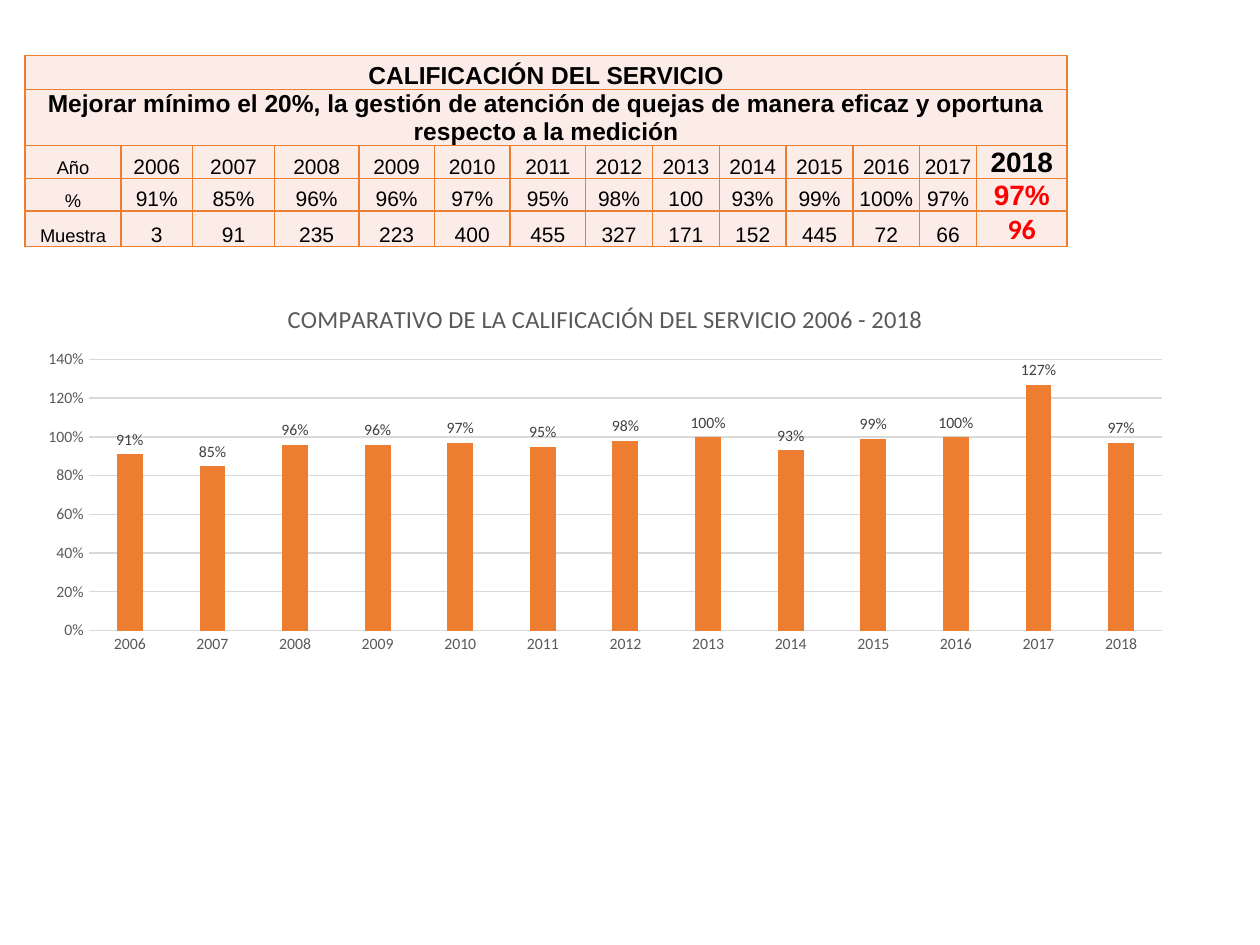
from lxml import etree
from pptx import Presentation
from pptx import util as u
from pptx.chart import data
from pptx.dml import color
from pptx.enum import chart as ch
from pptx.enum import text
from pptx.oxml import ns

Pt = u.Pt


class Theme:
    orange = "ED7D31"
    blush = "FCECE8"
    black = "000000"
    red = "FF0000"
    gray = "595959"
    dark = "404040"
    rule = "D9D9D9"
    sans = "Arial"
    body = "Calibri"
    head = 14
    big = 16
    cell = 12
    side = 10.5
    base = 10
    tick = 9


def style(font, size=Theme.cell, name=Theme.sans, tint=Theme.black, bold=False):
    font.size = Pt(size)
    font.name = name
    font.bold = bold
    font.color.rgb = color.RGBColor.from_string(tint)


def fill_cell(cell, words, **form):
    cell.margin_left = cell.margin_right = cell.margin_top = Pt(0.72)
    cell.margin_bottom = 0
    cell.vertical_anchor = text.MSO_ANCHOR.BOTTOM
    cell.fill.solid()
    cell.fill.fore_color.rgb = color.RGBColor.from_string(Theme.blush)
    para = cell.text_frame.paragraphs[0]
    para.alignment = text.PP_ALIGN.CENTER
    run = para.add_run()
    run.text = words
    style(run.font, **form)


deck = Presentation()
deck.slide_width, deck.slide_height = Pt(720), Pt(540)
slide = deck.slides.add_slide(deck.slide_layouts[6])

# Ratings by year
years = [str(year) for year in range(2006, 2019)]
rows = [
    ["Año", *years],
    ["%", "91%", "85%", "96%", "96%", "97%", "95%", "98%", "100", "93%",
     "99%", "100%", "97%", "97%"],
    ["Muestra", "3", "91", "235", "223", "400", "455", "327", "171", "152",
     "445", "72", "66", "96"],
]
heads = [
    "CALIFICACIÓN DEL SERVICIO",
    "Mejorar mínimo el 20%, la gestión de atención de quejas de manera eficaz"
    " y oportuna respecto a la medición",
]
wide = [54.7, 41, 46.8, 48.2] + [43.2] * 3 + [38.2] * 5 + [32.4, 51.8]
high = [19.4, 19.4, 18.7, 18.7, 19.4]
table = slide.shapes.add_table(
    len(high), len(wide), Pt(14.4), Pt(31.7), Pt(595.4), Pt(113)).table
for col, size in zip(table.columns, wide):
    col.width = Pt(size)
for row, size in zip(table.rows, high):
    row.height = Pt(size)

# Merged headings
for r, words in enumerate(heads):
    table.cell(r, 0).merge(table.cell(r, len(wide) - 1))
    fill_cell(table.cell(r, 0), words, size=Theme.head, bold=True)

# Figures, with the last year set off
last = len(years)
for r, row in enumerate(rows):
    for c, words in enumerate(row):
        form = {}
        if c == 0:
            form = {"size": Theme.side}
        elif c == last:
            form = {"size": Theme.big, "bold": True,
                    "tint": Theme.red if r else Theme.black,
                    "name": Theme.body if r == 2 else Theme.sans}
        fill_cell(table.cell(r + len(heads), c), words, **form)

# Cell borders
for cell in table.iter_cells():
    props = cell._tc.get_or_add_tcPr()
    for i, side in enumerate(("lnL", "lnR", "lnT", "lnB")):
        line = etree.Element(ns.qn("a:" + side), w=str(Pt(1)))
        paint = etree.SubElement(line, ns.qn("a:solidFill"))
        etree.SubElement(paint, ns.qn("a:srgbClr"), val=Theme.orange)
        props.insert(i, line)

# Column chart
marks = data.CategoryChartData(number_format="0%")
marks.categories = years
marks.add_series("Series 1", [0.91, 0.85, 0.96, 0.96, 0.97, 0.95, 0.98, 1,
                              0.93, 0.99, 1, 1.27, 0.97])
chart = slide.shapes.add_chart(
    ch.XL_CHART_TYPE.COLUMN_CLUSTERED, Pt(14.4), Pt(162), Pt(663.1), Pt(216),
    marks).chart
style(chart.font, size=Theme.base, name=Theme.body)
chart.has_legend = False
chart.has_title = True
title = chart.chart_title.text_frame
title.text = "COMPARATIVO DE LA CALIFICACIÓN DEL SERVICIO 2006 - 2018"
style(title.paragraphs[0].runs[0].font, size=Theme.head, name=Theme.body,
      tint=Theme.gray)

# Axes
cats, vals = chart.category_axis, chart.value_axis
for axis in (cats, vals):
    axis.major_tick_mark = axis.minor_tick_mark = ch.XL_TICK_MARK.NONE
    style(axis.tick_labels.font, size=Theme.tick, name=Theme.body,
          tint=Theme.gray)
vals.format.line.fill.background()
vals.has_major_gridlines = True
vals.tick_labels.number_format = "0%"
vals.tick_labels.number_format_is_linked = False
for line in (cats.format.line, vals.major_gridlines.format.line):
    line.color.rgb = color.RGBColor.from_string(Theme.rule)
    line.width = Pt(0.75)

# Bars and labels
plot = chart.plots[0]
plot.gap_width, plot.overlap = 219, -27
plot.vary_by_categories = False
bars = plot.series[0]
bars.format.fill.solid()
bars.format.fill.fore_color.rgb = color.RGBColor.from_string(Theme.orange)
tags = bars.data_labels
tags.show_value = True
tags.position = ch.XL_LABEL_POSITION.OUTSIDE_END
style(tags.font, size=Theme.tick, name=Theme.body, tint=Theme.dark)

deck.save("out.pptx")
